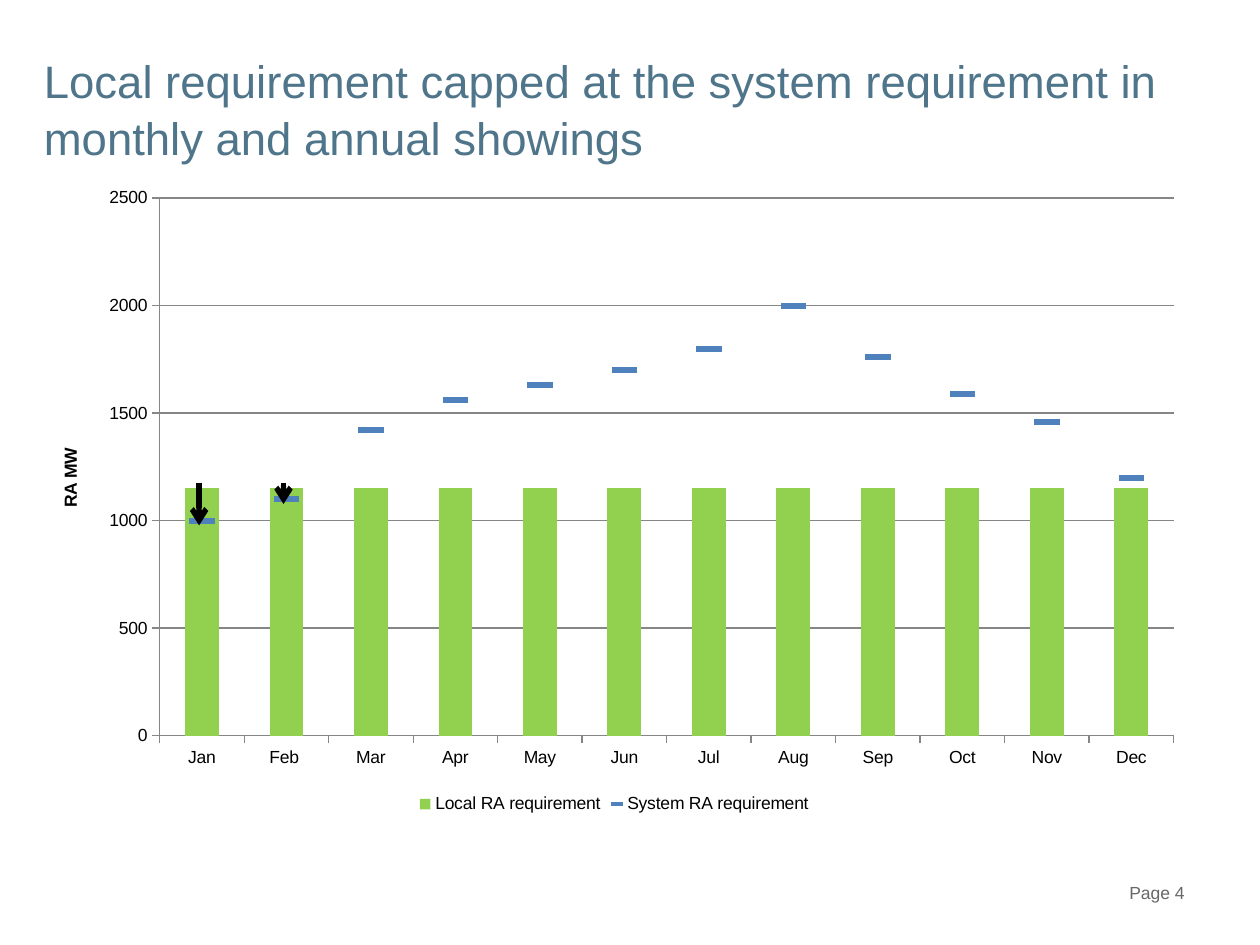
import pptx
import pptx.chart.data
import pptx.dml.color
import pptx.enum.chart
import pptx.enum.shapes
import pptx.enum.text
import pptx.oxml
import pptx.oxml.ns
import pptx.util
from dataclasses import dataclass

Inches = pptx.util.Inches
Pt = pptx.util.Pt
qn = pptx.oxml.ns.qn


@dataclass(frozen=True)
class Theme:
    font: str = "Arial"
    title: str = "4F758B"
    footer: str = "686868"
    ink: str = "000000"
    rule: str = "868686"
    local: str = "92D050"
    system: str = "4F81BD"
    title_size: int = 26
    small_size: int = 10


THEME = Theme()
MONTHS = ["Jan", "Feb ", "Mar", "Apr", "May", "Jun",
          "Jul", "Aug", "Sep", "Oct", "Nov", "Dec"]
LOCAL = [1150] * len(MONTHS)
SYSTEM = [1000, 1100, 1420, 1560, 1630, 1700, 1800, 2000, 1760, 1590, 1460, 1200]


def rgb(color):
    return pptx.dml.color.RGBColor.from_string(color)


def style_font(font, size, color, bold=False):
    font.name = THEME.font
    font.size = Pt(size)
    font.bold = bold
    font.color.rgb = rgb(color)


def add_text(page, bounds, text, size, color, align, top_inset=0.05, spacing=1.0):
    box = page.shapes.add_textbox(*map(Inches, bounds))
    frame = box.text_frame
    frame.word_wrap = True
    frame.margin_top = Inches(top_inset)
    frame.text = text
    para = frame.paragraphs[0]
    para.alignment = align
    para.line_spacing = spacing
    style_font(para.runs[0].font, size, color)


def add_arrow(page, x, top, bottom):
    arrow = page.shapes.add_connector(
        pptx.enum.shapes.MSO_CONNECTOR.STRAIGHT,
        Inches(x), Inches(top), Inches(x), Inches(bottom))
    arrow.line.color.rgb = rgb(THEME.ink)
    arrow.line.width = Pt(3)
    line = arrow.line._get_or_add_ln()
    line.append(pptx.oxml.parse_xml(
        f'<a:tailEnd {pptx.oxml.ns.nsdecls("a")} type="arrow"/>'))
    arrow._element.spPr.append(pptx.oxml.parse_xml(
        f'<a:effectLst {pptx.oxml.ns.nsdecls("a")}/>'))


def move_last_series_to_line(chart):
    """Turn the last column series into a line on the same axes."""
    bars = chart.plots[0]._element
    series = bars.findall(qn("c:ser"))[-1]
    for column_setting in series.findall(qn("c:invertIfNegative")):
        series.remove(column_setting)
    axis_ids = "".join(f'<c:axId val="{axis.get("val")}"/>'
                       for axis in bars.findall(qn("c:axId")))
    lines = pptx.oxml.parse_xml(
        f'<c:lineChart {pptx.oxml.ns.nsdecls("c")}><c:grouping val="standard"/>'
        f'<c:varyColors val="0"/><c:marker val="1"/>{axis_ids}</c:lineChart>')
    lines.insert(2, series)
    bars.addnext(lines)


def set_plot_area(chart, x, y, w, h):
    area = chart._chartSpace.chart.plotArea
    for old in area.findall(qn("c:layout")):
        area.remove(old)
    sizes = "".join(f'<c:{name} val="{value}"/>'
                    for name, value in zip("xywh", (x, y, w, h)))
    area.insert(0, pptx.oxml.parse_xml(
        f'<c:layout {pptx.oxml.ns.nsdecls("c")}><c:manualLayout>'
        '<c:layoutTarget val="inner"/><c:xMode val="edge"/><c:yMode val="edge"/>'
        f'{sizes}</c:manualLayout></c:layout>'))


def style_axes(chart):
    for axis in (chart.category_axis, chart.value_axis):
        axis.format.line.color.rgb = rgb(THEME.rule)
        axis.major_tick_mark = pptx.enum.chart.XL_TICK_MARK.OUTSIDE
        style_font(axis.tick_labels.font, THEME.small_size, THEME.ink)
    values = chart.value_axis
    values.minimum_scale, values.maximum_scale, values.major_unit = 0, 2500, 500
    values.has_major_gridlines = True
    values.major_gridlines.format.line.color.rgb = rgb(THEME.rule)
    title = values.axis_title.text_frame
    title.text = "RA MW"
    style_font(title.paragraphs[0].runs[0].font, THEME.small_size, THEME.ink, True)


def add_requirement_chart(page, bounds):
    data = pptx.chart.data.CategoryChartData()
    data.categories = MONTHS
    data.add_series("Local RA requirement", LOCAL)
    data.add_series("System RA requirement", SYSTEM)
    chart = page.shapes.add_chart(
        pptx.enum.chart.XL_CHART_TYPE.COLUMN_CLUSTERED,
        *map(Inches, bounds), data).chart
    style_font(chart.font, THEME.small_size, THEME.ink)
    chart.has_title = False
    move_last_series_to_line(chart)
    set_plot_area(chart, 0.11, 0.03, 0.87, 0.84)
    style_axes(chart)

    # Local requirement as columns, system requirement as dashes
    columns, dashes = chart.plots
    columns.gap_width = 150
    columns.vary_by_categories = False
    fill = columns.series[0].format.fill
    fill.solid()
    fill.fore_color.rgb = rgb(THEME.local)
    system = dashes.series[0]
    system.smooth = False
    system.format.line.fill.background()
    system.marker.style = pptx.enum.chart.XL_MARKER_STYLE.DASH
    system.marker.size = 14
    system.marker.format.fill.solid()
    system.marker.format.fill.fore_color.rgb = rgb(THEME.system)
    system.marker.format.line.fill.background()

    chart.has_legend = True
    chart.legend.position = pptx.enum.chart.XL_LEGEND_POSITION.BOTTOM
    chart.legend.include_in_layout = False
    style_font(chart.legend.font, THEME.small_size, THEME.ink)


def main():
    deck = pptx.Presentation()
    deck.slide_width, deck.slide_height = Inches(10), Inches(7.5)
    page = deck.slides.add_slide(deck.slide_layouts[6])
    align = pptx.enum.text.PP_ALIGN

    # Title and page number
    add_text(page, (0.25, 0.33, 9.5, 1.25),
             "Local requirement capped at the system requirement in "
             "monthly and annual showings",
             THEME.title_size, THEME.title, align.LEFT, 0.07, 1.05)
    add_text(page, (7.17, 6.95, 2.33, 0.4), "Page 4",
             THEME.small_size, THEME.footer, align.RIGHT)

    # Chart, with arrows where the local requirement is capped
    add_requirement_chart(page, (0.25, 1.42, 9.25, 5.08))
    for x, bottom in ((1.58, 4.17), (2.25, 4)):
        add_arrow(page, x, 3.83, bottom)

    deck.save("out.pptx")


if __name__ == "__main__":
    main()
